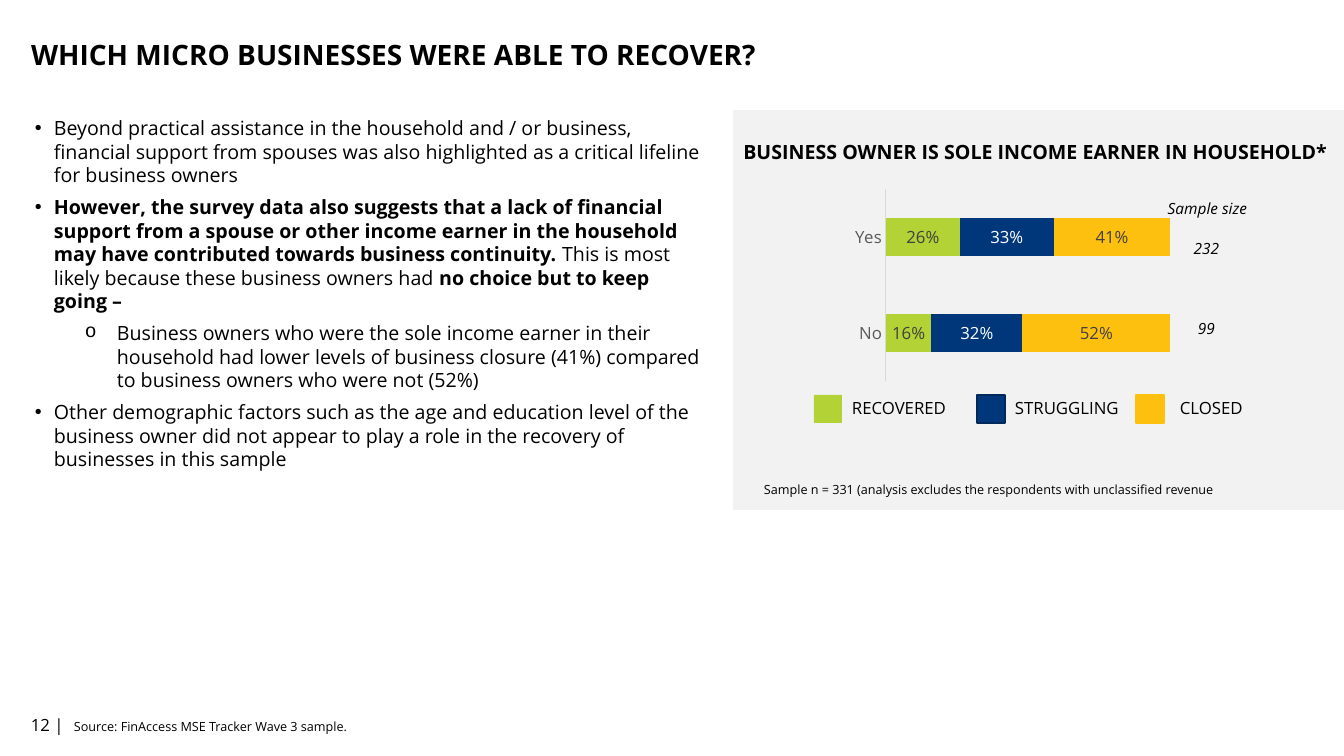
from lxml import etree
from pptx import Presentation
from pptx import util as u
from pptx.chart.data import CategoryChartData
from pptx.dml.color import RGBColor
from pptx.enum import chart as ch, shapes, text
from pptx.oxml import parse_xml
from pptx.oxml.ns import nsdecls, qn

SCALE = 12192000 / 1344
FONT = "Open Sans"
GREEN, NAVY, YELLOW = "B3D235", "00377B", "FEC00F"


def px(*lengths):
    return [u.Emu(round(length * SCALE)) for length in lengths]


def write(box, paragraphs, size, bold=False, italic=False, align="LEFT",
          anchor="TOP", after=6, spacing=None):
    frame = box.text_frame
    frame.word_wrap = True
    frame.auto_size = text.MSO_AUTO_SIZE.NONE
    frame.vertical_anchor = text.MSO_ANCHOR[anchor]
    for index, (bullet, spans) in enumerate(paragraphs):
        para = frame.paragraphs[0] if index == 0 else frame.add_paragraph()
        para.alignment = text.PP_ALIGN[align]
        para.space_before = u.Pt(0)
        para.space_after = u.Pt(after)
        if spacing:
            para.line_spacing = spacing
        if bullet:
            margin, indent = (82, -32) if bullet == "o" else (19, -19)
            para.level = 1 if bullet == "o" else 0
            props = para._p.get_or_add_pPr()
            props.set("marL", str(px(margin)[0]))
            props.set("indent", str(px(indent)[0]))
            face = "Courier New" if bullet == "o" else "Arial"
            etree.SubElement(props, qn("a:buFont"), typeface=face)
            etree.SubElement(props, qn("a:buChar"), char=bullet)
        for words, strong in spans:
            span = para.add_run()
            span.text = words
            span.font.name = FONT
            span.font.size = u.Pt(size)
            span.font.bold = bold or strong
            span.font.italic = italic
            span.font.color.rgb = RGBColor.from_string("000000")


deck = Presentation()
deck.slide_width, deck.slide_height = px(1344, 756)
page = deck.slides.add_slide(deck.slide_layouts[5])

title = page.shapes.title
title.left, title.top, title.width, title.height = px(21, 5, 1187, 103)
write(title, [(None, [("WHICH MICRO BUSINESSES WERE ABLE TO RECOVER?", True)])],
      20, anchor="MIDDLE", after=0, spacing=0.9)

squares = [
    (733, 110, 611, 400, "F2F2F2", None),
    (814, 395, 28, 28, GREEN, None),
    (977, 395, 28, 28, NAVY, "00295B"),
    (1136, 395, 28, 28, YELLOW, YELLOW),
]
for left, top, width, height, fill, line in squares:
    square = page.shapes.add_shape(shapes.MSO_SHAPE.RECTANGLE, *px(left, top, width, height))
    square.shadow.inherit = False
    square.fill.solid()
    square.fill.fore_color.rgb = RGBColor.from_string(fill)
    if line:
        square.line.color.rgb = RGBColor.from_string(line)
        square.line.width = u.Pt(1)
    else:
        square.line.fill.background()

body = [
    ("•", [("Beyond practical assistance in the household and / or business, financial "
            "support from spouses was also highlighted as a critical lifeline for "
            "business owners", False)]),
    ("•", [("However, the survey data also suggests that a lack of financial support "
            "from a spouse or other income earner in the household may have contributed "
            "towards business continuity. ", True),
           ("This is most likely because these business owners had ", False),
           ("no choice but to keep going –", True)]),
    ("o", [("Business owners who were the sole income earner in their household had "
            "lower levels of business closure (41%) compared to business owners who "
            "were not (52%)", False)]),
    ("•", [("Other demographic factors such as the age and education level of the "
            "business owner did not appear to play a role in the recovery of "
            "businesses in this sample", False)]),
]
write(page.shapes.add_textbox(*px(25, 111, 689, 400)), body, 14)

small = dict(size=9)
legend = dict(size=12)
sample = dict(size=11, italic=True, align="CENTER")
labels = [
    ("12 |", (21, 705, 70, 40), dict(size=12, anchor="MIDDLE", after=0)),
    ("Source: FinAccess MSE Tracker Wave 3 sample.", (64, 707, 1118, 40),
     dict(size=9, anchor="MIDDLE", after=0)),
    ("BUSINESS OWNER IS SOLE INCOME EARNER IN HOUSEHOLD*", (718, 135, 635, 34),
     dict(size=14, bold=True, align="CENTER")),
    ("RECOVERED", (842, 393, 116, 30), legend),
    ("STRUGGLING", (1005, 393, 133, 30), legend),
    ("CLOSED", (1170, 393, 133, 30), legend),
    ("Sample size", (1155, 194, 105, 29), sample),
    ("232", (1176, 234, 61, 29), sample),
    ("99", (1176, 314, 61, 29), sample),
    ("Sample n = 331 (analysis excludes the respondents with unclassified revenue",
     (754, 477, 550, 25), small),
]
for words, place, style in labels:
    write(page.shapes.add_textbox(*px(*place)), [(None, [(words, False)])], **style)

data = CategoryChartData(number_format="0%")
data.categories = ["No", "Yes"]
data.add_series("Recovered", (0.16, 0.26))
data.add_series("Struggling", (0.32, 0.33))
data.add_series("Closed", (0.52, 0.41))
chart = page.shapes.add_chart(ch.XL_CHART_TYPE.BAR_STACKED_100,
                              *px(850, 185, 327, 200), data).chart
chart.has_legend = False
chart.has_title = False
chart.font.name = FONT
chart.font.size = u.Pt(12)

plot = chart.plots[0]
plot.gap_width = 150
plot.overlap = 100
plot.vary_by_categories = False
for series, fill, ink in zip(plot.series, (GREEN, NAVY, YELLOW),
                             ("404040", "FFFFFF", "404040")):
    series.format.fill.solid()
    series.format.fill.fore_color.rgb = RGBColor.from_string(fill)
    values = series.data_labels
    values.show_value = True
    values.number_format = "0%"
    values.number_format_is_linked = False
    values.position = ch.XL_LABEL_POSITION.CENTER
    values.font.name = FONT
    values.font.size = u.Pt(12)
    values.font.color.rgb = RGBColor.from_string(ink)

answers = chart.category_axis
answers.major_tick_mark = ch.XL_TICK_MARK.NONE
answers.format.line.color.rgb = RGBColor.from_string("D9D9D9")
answers.format.line.width = u.Pt(0.75)
answers.tick_labels.font.name = FONT
answers.tick_labels.font.size = u.Pt(12)
answers.tick_labels.font.color.rgb = RGBColor.from_string("595959")
chart.value_axis.has_major_gridlines = False
chart.value_axis.visible = False

area = chart._chartSpace.chart.plotArea
for layout in area.findall(qn("c:layout")):
    area.remove(layout)
edges = "".join(f'<c:{name} val="{value}"/>' for name, value in (
    ("layoutTarget", "inner"), ("xMode", "edge"), ("yMode", "edge"),
    ("x", 0.11), ("y", 0.02), ("w", 0.87), ("h", 0.96)))
area.insert(0, parse_xml(
    f'<c:layout {nsdecls("c")}><c:manualLayout>{edges}</c:manualLayout></c:layout>'))

deck.save("out.pptx")
